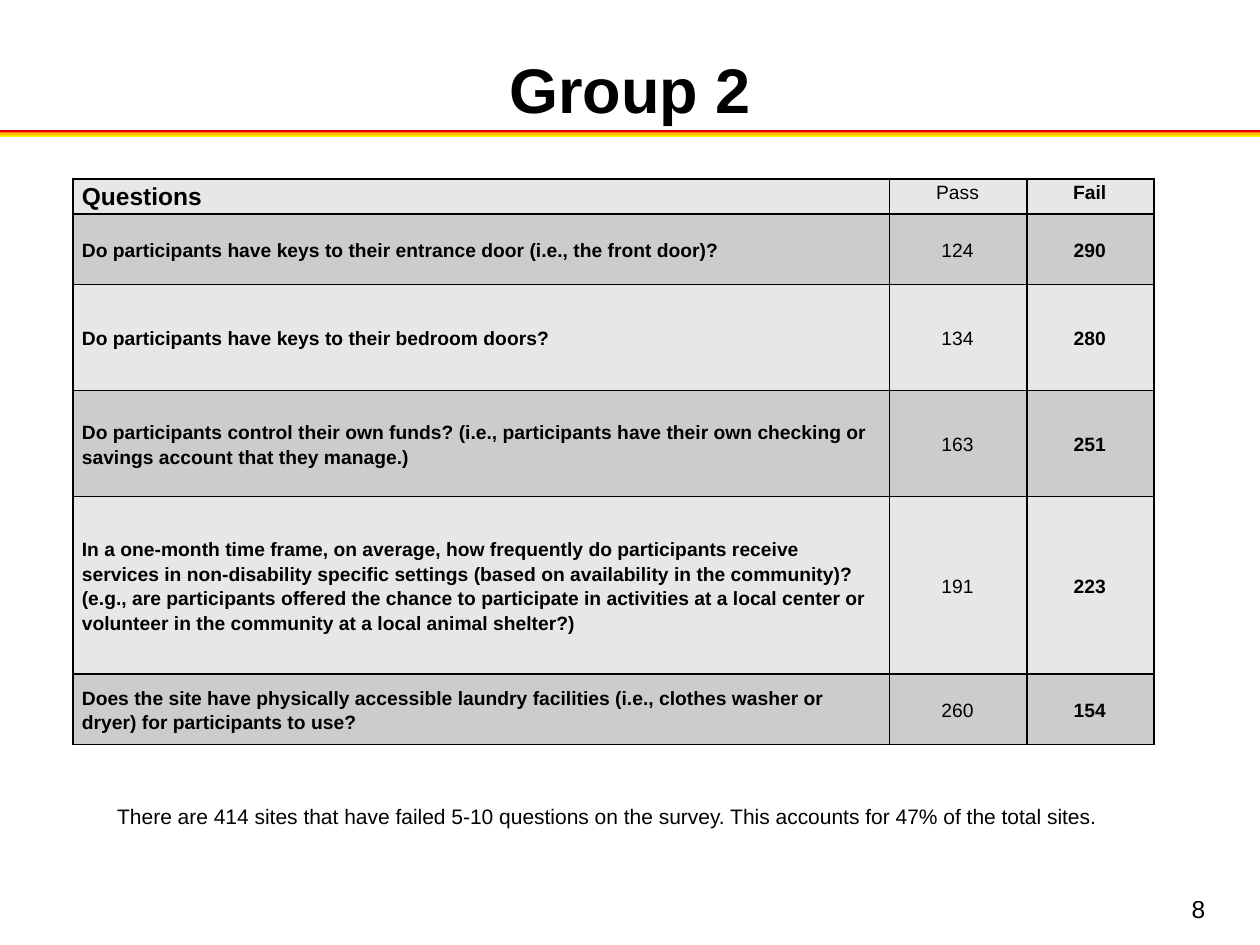
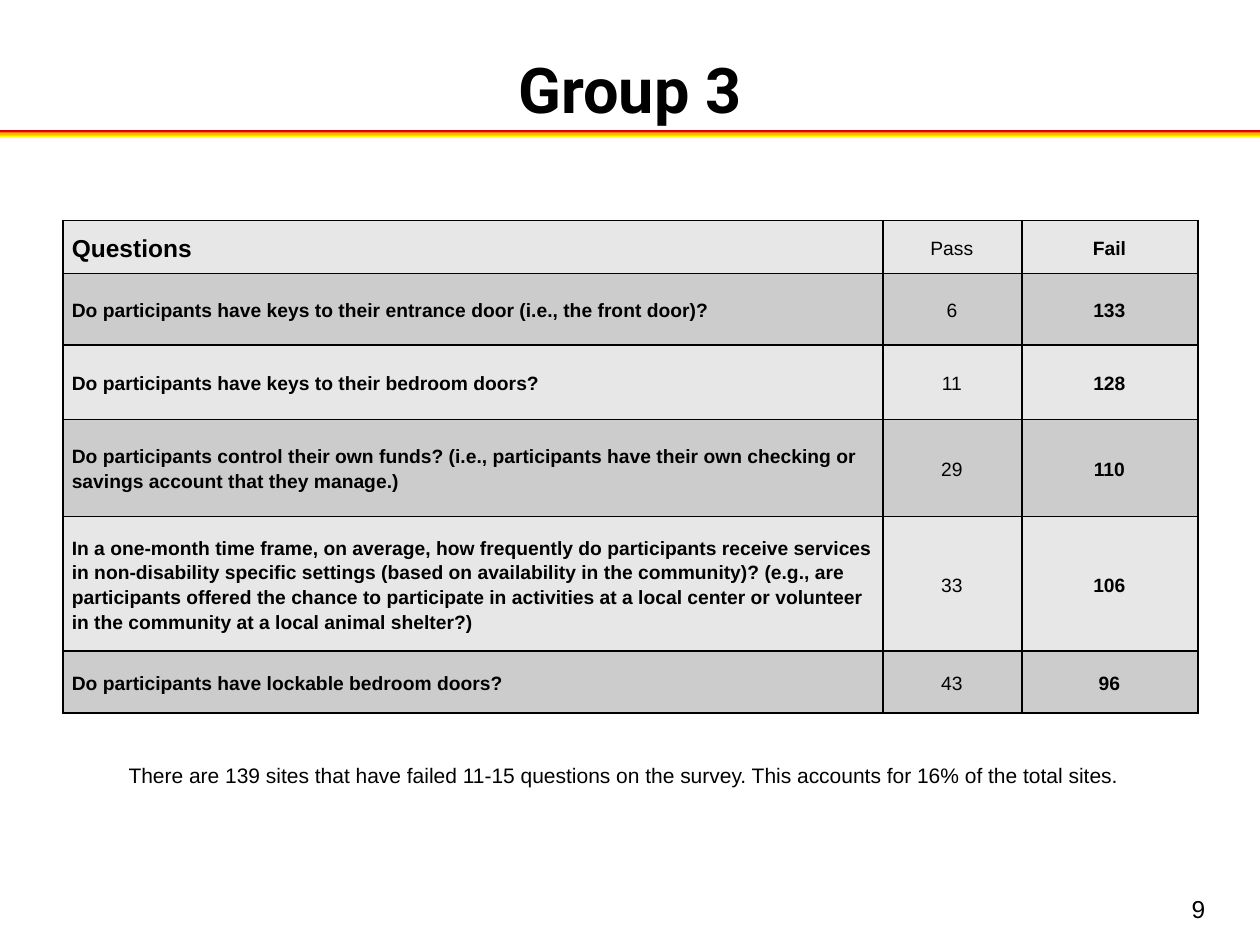
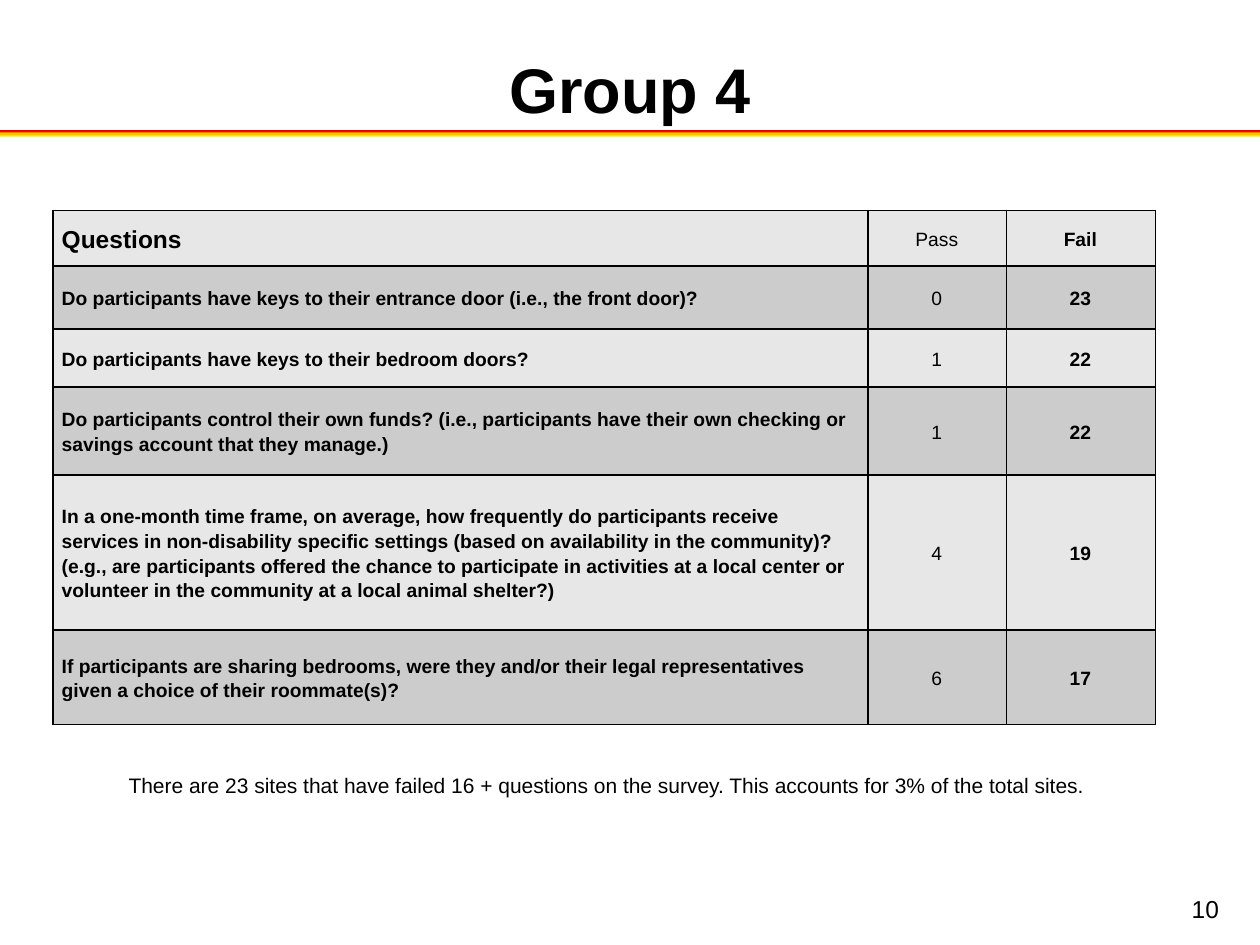
from lxml import etree
from pptx import Presentation
from pptx.dml.color import RGBColor
from pptx.enum.shapes import MSO_SHAPE
from pptx.enum.text import MSO_ANCHOR, MSO_AUTO_SIZE, PP_ALIGN
from pptx.oxml.ns import qn
from pptx.util import Inches, Pt

TOP, MIDDLE = MSO_ANCHOR.TOP, MSO_ANCHOR.MIDDLE
LEFT, CENTER = PP_ALIGN.LEFT, PP_ALIGN.CENTER
NO_FIT = MSO_AUTO_SIZE.NONE
RECT = MSO_SHAPE.RECTANGLE

COLORS = {"text": "000000", "border": "000000", "light": "E7E7E7", "dark": "CCCCCC"}
BAND_STOPS = [(0, "C00000"), (30, "FF0000"), (54, "FFC000"), (84, "FFC000"), (100, "FFFF00")]

# Questions shared by every group
COMMON = [
    "Do participants have keys to their entrance door (i.e., the front door)?",
    "Do participants have keys to their bedroom doors?",
    "Do participants control their own funds? (i.e., participants have their own checking or "
    "savings account that they manage.)",
    "In a one-month time frame, on average, how frequently do participants receive services in "
    "non-disability specific settings (based on availability in the community)? (e.g., are "
    "participants offered the chance to participate in activities at a local center or volunteer "
    "in the community at a local animal shelter?)",
]

GROUPS = [
    {"title": "Group 2", "font": "Arial", "page": "8", "head_anchor": TOP,
     "origin": (0.58, 1.42), "cols": [6.48, 1.09, 1.01],
     "rows": [0.28, 0.56, 0.84, 0.84, 1.41, 0.56],
     "last": "Does the site have physically accessible laundry facilities (i.e., clothes washer "
             "or dryer) for participants to use?",
     "scores": [(124, 290), (134, 280), (163, 251), (191, 223), (260, 154)],
     "note": "There are 414 sites that have failed 5-10 questions on the survey. "
             "This accounts for 47% of the total sites.",
     "note_box": (0.83, 6.33, 8.06, 0.54)},
    {"title": "Group 3", "font": "Roboto", "page": "9", "head_anchor": MIDDLE,
     "origin": (0.5, 1.75), "cols": [6.51, 1.1, 1.4],
     "rows": [0.42, 0.57, 0.59, 0.77, 1.07, 0.49],
     "last": "Do participants have lockable bedroom doors?",
     "scores": [(6, 133), (11, 128), (29, 110), (33, 106), (43, 96)],
     "note": "There are 139 sites that have failed 11-15 questions on the survey. "
             "This accounts for 16% of the total sites.",
     "note_box": (0.92, 6, 8.16, 0.61)},
    {"title": "Group 4", "font": "Arial", "page": "10", "head_anchor": MIDDLE,
     "origin": (0.42, 1.67), "cols": [6.47, 1.1, 1.18],
     "rows": [0.44, 0.5, 0.46, 0.7, 1.23, 0.75],
     "last": "If participants are sharing bedrooms, were they and/or their legal "
             "representatives given a choice of their roommate(s)?",
     "scores": [(0, 23), (1, 22), (1, 22), (4, 19), (6, 17)],
     "note": "There are 23 sites that have failed 16 + questions on the survey. "
             "This accounts for 3% of the total sites.",
     "note_box": (0.92, 6.08, 7.88, 0.61)},
]


def write(tf, text, size, bold=False, align=LEFT, font="Arial"):
    p = tf.paragraphs[0]
    p.alignment = align
    p.space_before = Pt(0)
    r = p.add_run()
    r.text = text
    r.font.size, r.font.bold, r.font.name = Pt(size), bold, font
    r.font.color.rgb = RGBColor.from_string(COLORS["text"])
    return p


def place(sp, box, anchor):
    sp.left, sp.top, sp.width, sp.height = [Inches(v) for v in box]
    tf = sp.text_frame
    tf.word_wrap, tf.auto_size, tf.vertical_anchor = True, NO_FIT, anchor
    return tf


prs = Presentation()
prs.slide_width, prs.slide_height = Inches(10), Inches(7.5)
layout = prs.slide_layouts[1]
slides = [prs.slides.add_slide(layout) for _ in GROUPS]

# Gradient band, moved to the layout so that all slides share it
band = slides[0].shapes.add_shape(RECT, 0, Inches(1.03), prs.slide_width, Inches(0.05))
band.shadow.inherit = False
band.line.fill.background()
band.fill.gradient()
band.fill.gradient_angle = 270
stops = next(band.element.iter(qn("a:gsLst")))
for old in list(stops):
    stops.remove(old)
for pos, color in BAND_STOPS:
    gs = etree.SubElement(stops, qn("a:gs"), pos=str(pos * 1000))
    etree.SubElement(gs, qn("a:srgbClr"), val=color)
band.element.nvSpPr.cNvPr.set("id", "20")
layout.shapes.element.append(band.element)

for s, group in zip(slides, GROUPS):
    # Title
    tf = place(s.shapes.title, (0.5, 0.3, 9, 1.25), TOP)
    tf.margin_top = Inches(0.1)
    write(tf, group["title"], 36, True, CENTER, group["font"])

    # Page number
    tf = place(s.shapes.add_textbox(0, 0, 0, 0), (9.36, 6.93, 0.6, 0.57), MIDDLE)
    write(tf, group["page"], 14)

    # Table of questions and scores
    rows = [("Questions", "Pass", "Fail")]
    rows += [(q, *score) for q, score in zip(COMMON + [group["last"]], group["scores"])]
    x, y = group["origin"]
    table = s.shapes.add_table(len(rows), 3, Inches(x), Inches(y), Inches(sum(group["cols"])),
                               Inches(sum(group["rows"]))).table
    for column, width in zip(table.columns, group["cols"]):
        column.width = Inches(width)
    for i, values in enumerate(rows):
        table.rows[i].height = Inches(group["rows"][i])
        for j, value in enumerate(values):
            cell = table.cell(i, j)
            cell.margin_left, cell.margin_right = Inches(0.07), Inches(0.08)
            cell.margin_top = cell.margin_bottom = 0
            cell.vertical_anchor = MIDDLE if i else group["head_anchor"]
            p = write(cell.text_frame, str(value), 14 if i == j == 0 else 11, j != 1,
                      CENTER if j else LEFT)
            p.line_spacing = 1.15
            # Borders come before the fill in the cell properties
            for side in ("lnL", "lnR", "lnT", "lnB"):
                ln = etree.SubElement(cell._tc.get_or_add_tcPr(), qn("a:" + side),
                                      w=str(Pt(1)))
                fill = etree.SubElement(ln, qn("a:solidFill"))
                etree.SubElement(fill, qn("a:srgbClr"), val=COLORS["border"])
            cell.fill.solid()
            cell.fill.fore_color.rgb = RGBColor.from_string(COLORS["dark" if i % 2 else "light"])

    # Note under the table
    tf = place(s.placeholders[1], group["note_box"], TOP)
    pPr = tf.paragraphs[0]._p.get_or_add_pPr()
    pPr.set("marL", "0")
    pPr.set("indent", "0")
    etree.SubElement(pPr, qn("a:buNone"))
    write(tf, group["note"], 12)

prs.save("out.pptx")
